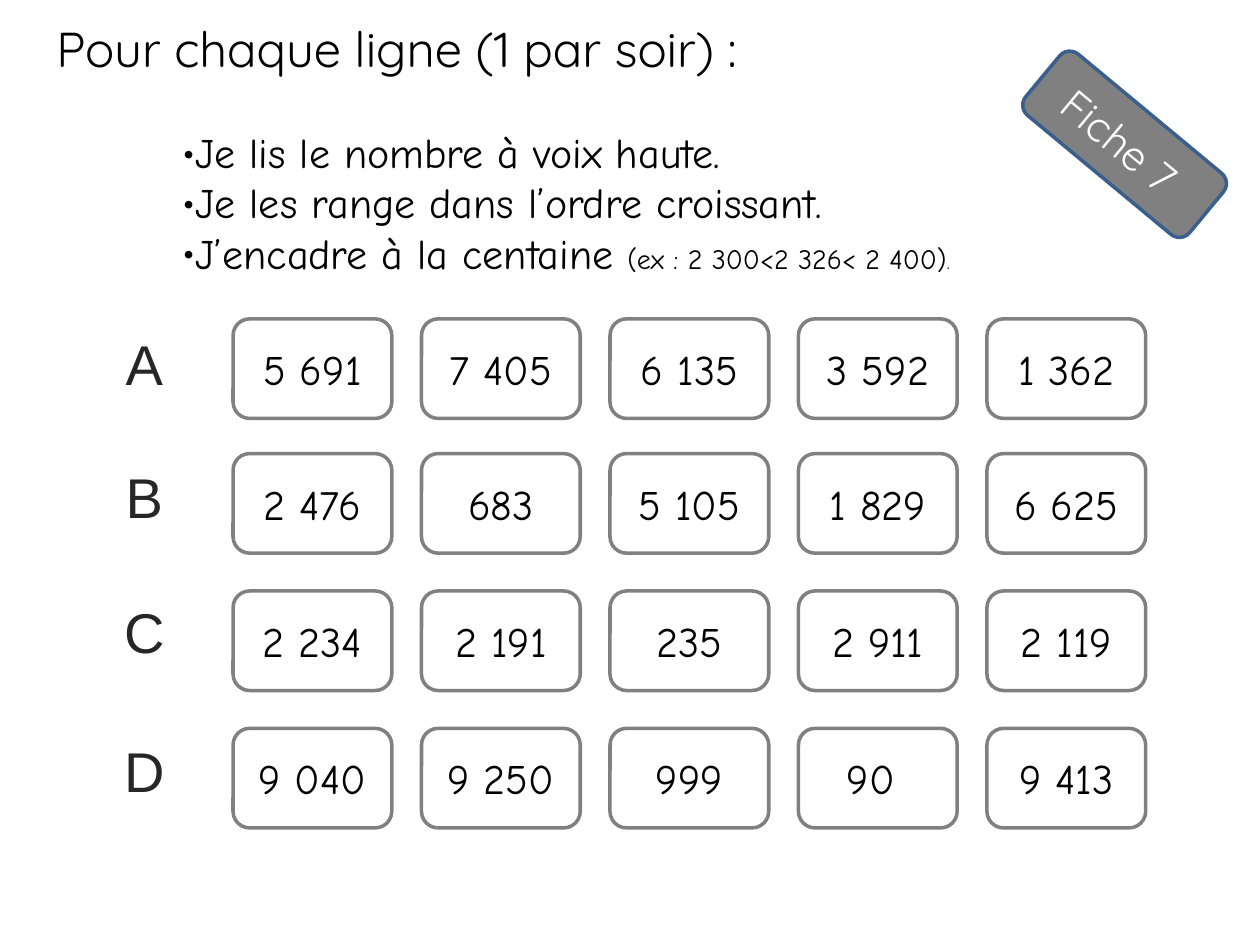
"""Builds the number-ordering worksheet slide, Fiche 7."""
from lxml.etree import SubElement
from pptx import Presentation
from pptx.dml.color import RGBColor
from pptx.enum.shapes import MSO_SHAPE
from pptx.enum.text import MSO_ANCHOR, PP_ALIGN
from pptx.oxml.ns import qn
from pptx.util import Pt

BLACK = RGBColor(0x00, 0x00, 0x00)
CHARCOAL = RGBColor(0x26, 0x26, 0x26)
GRAY = RGBColor(0x80, 0x80, 0x80)
BLUE = RGBColor(0x3A, 0x5F, 0x8C)
WHITE = RGBColor(0xFF, 0xFF, 0xFF)

HAND_FONT = "Comic Neue"
TITLE_FONT = "Quicksand"


def add_text(paragraph, text, size=24, font=HAND_FONT, color=BLACK, align=PP_ALIGN.CENTER):
    paragraph.alignment = align
    run = paragraph.add_run()
    run.text = text
    run.font.size = Pt(size)
    run.font.name = font
    run.font.color.rgb = color


def add_card(left, top, width, height, fill, line):
    card = slide.shapes.add_shape(
        MSO_SHAPE.ROUNDED_RECTANGLE, Pt(left), Pt(top), Pt(width), Pt(height))
    card.shadow.inherit = False
    card.fill.solid()
    card.fill.fore_color.rgb = fill
    card.line.color.rgb = line
    card.line.width = Pt(2)
    card.text_frame.word_wrap = True
    card.text_frame.vertical_anchor = MSO_ANCHOR.MIDDLE
    return card


presentation = Presentation()
presentation.slide_width = Pt(720)
presentation.slide_height = Pt(540)
slide = presentation.slides.add_slide(presentation.slide_layouts[6])

instructions = slide.shapes.add_textbox(Pt(25.2), Pt(26.6), Pt(666.7), Pt(116)).text_frame
instructions.word_wrap = True
instructions.vertical_anchor = MSO_ANCHOR.MIDDLE
heading = instructions.paragraphs[0]
heading.space_after = Pt(28)
add_text(heading, "Pour chaque ligne (1 par soir) :", size=28, font=TITLE_FONT, align=PP_ALIGN.LEFT)

steps = [
    [("Je lis le nombre à voix haute.", 24)],
    [("Je les range dans l’ordre croissant.", 24)],
    [("J’encadre à la centaine ", 24), ("(ex : 2 300<2 326< 2 400)", 16), (".", 11)],
]
for step in steps:
    paragraph = instructions.add_paragraph()
    for text, size in step:
        add_text(paragraph, text, size=size, align=PP_ALIGN.LEFT)
    properties = paragraph._p.get_or_add_pPr()
    properties.set("marL", str(Pt(78.5)))
    properties.set("indent", str(-Pt(6.5)))
    SubElement(properties, qn("a:buFont")).set("typeface", HAND_FONT)
    SubElement(properties, qn("a:buChar")).set("char", "•")

rows = [
    ("A", 185, 182.2, ["5 691", "7 405", "6 135", "3 592", "1 362"]),
    ("B", 260.6, 259.2, ["2 476", "683", "5 105", "1 829", "6 625"]),
    ("C", 337.7, 337.7, ["2 234", "2 191", "235", "2 911", "2 119"]),
    ("D", 417.6, 416.2, ["9 040", "9 250", "999", "90 ", "9 413"]),
]
for letter, letter_top, card_top, numbers in rows:
    label = slide.shapes.add_textbox(Pt(54), Pt(letter_top), Pt(56.9), Pt(62.6)).text_frame
    label.word_wrap = True
    label.paragraphs[0].space_before = Pt(3)
    add_text(label.paragraphs[0], letter, size=32, font="Arial", color=CHARCOAL)
    for column, number in enumerate(numbers):
        card = add_card(133.2 + column * 107.7, card_top, 90.7, 56.9, WHITE, GRAY)
        add_text(card.text_frame.paragraphs[0], number)

badge = add_card(581.8, 59.8, 121.7, 45.4, GRAY, BLUE)
badge.rotation = 39.7
add_text(badge.text_frame.paragraphs[0], "Fiche 7 ", font=TITLE_FONT, color=WHITE)

presentation.save("out.pptx")
